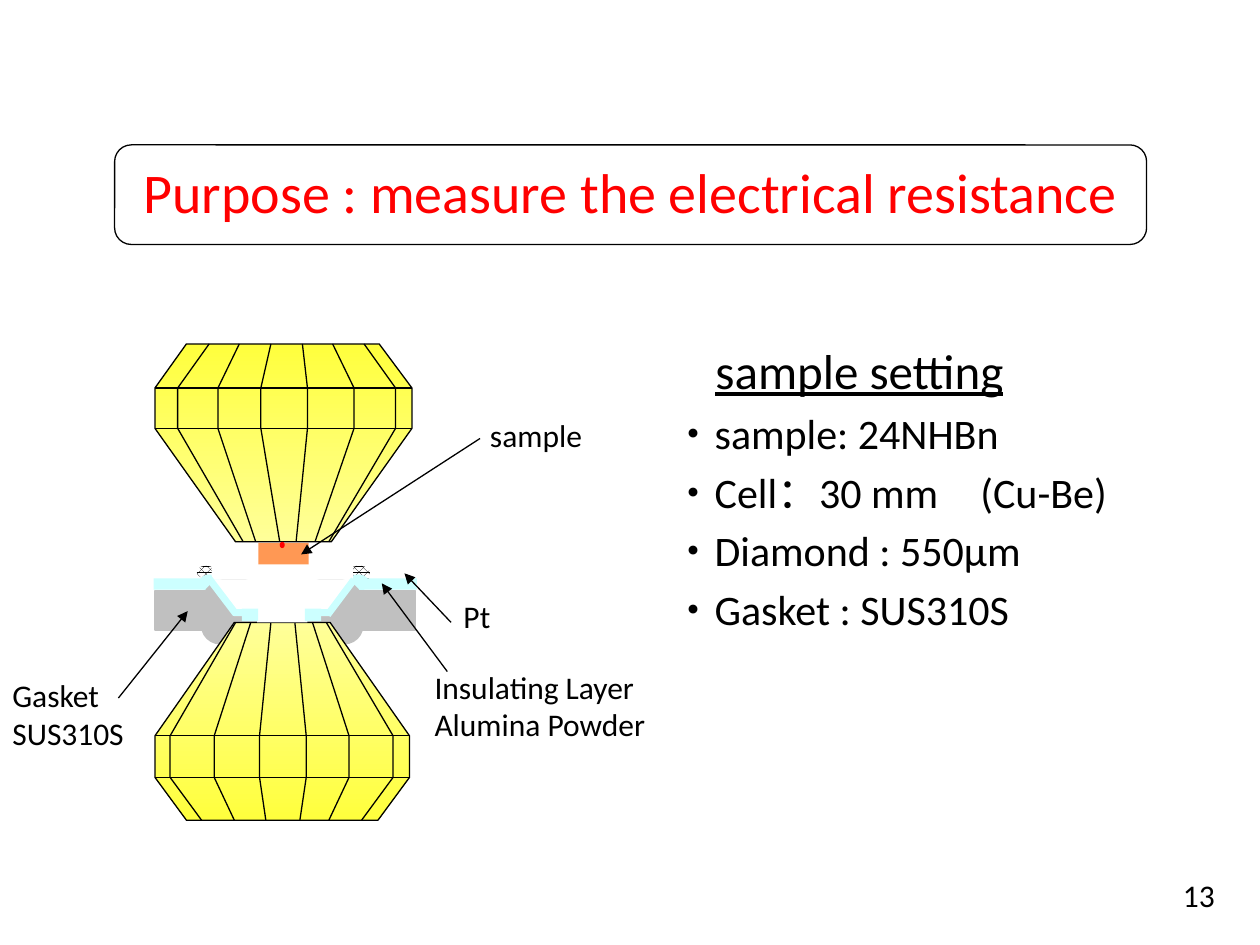
from dataclasses import dataclass

from lxml.etree import SubElement
from pptx import Presentation
from pptx.dml.color import RGBColor
from pptx.enum.dml import MSO_PATTERN
from pptx.enum.shapes import MSO_CONNECTOR, MSO_SHAPE as Preset
from pptx.oxml.ns import qn
from pptx.util import Inches, Pt


@dataclass(frozen=True)
class Theme:
    font: str = "Calibri"
    ink: str = "000000"
    paper: str = "FFFFFF"
    accent: str = "FF0000"
    gasket: str = "C0C0C0"
    insulator: str = "CCFFFF"
    sample: str = "FF6600"
    diamond_deep: str = "FFFF3D"
    diamond_pale: str = "FFFF99"
    title_size: int = 32
    heading_size: int = 28
    body_size: int = 24
    label_size: int = 18
    thin: float = 0.75
    layer: float = 4


THEME = Theme()


def rgb(colour):
    return RGBColor.from_string(colour)


class SlideBuilder:
    def __init__(self, slide, theme):
        self.shapes = slide.shapes
        self.theme = theme

    def style(self, shape, fill=None, outline=None):
        shape.shadow.inherit = False
        if fill:
            shape.fill.solid()
            shape.fill.fore_color.rgb = rgb(fill)
        else:
            shape.fill.background()
        if outline:
            shape.line.color.rgb = rgb(outline)
            shape.line.width = Pt(self.theme.thin)
        else:
            shape.line.fill.background()
        return shape

    def preset(self, kind, box, fill=None, outline=None, opacity=None):
        shape = self.shapes.add_shape(kind, *map(Inches, box))
        self.style(shape, fill, outline)
        if opacity:
            colour = shape._element.spPr.find(qn("a:solidFill"))[0]
            SubElement(colour, qn("a:alpha")).set("val", str(opacity * 1000))
        return shape

    def powder(self, box):
        """Speckled grain of insulating powder."""
        grain = self.preset(Preset.OVAL, box)
        grain.fill.patterned()
        grain.fill.pattern = MSO_PATTERN.PERCENT_70
        grain.fill.fore_color.rgb = rgb(self.theme.ink)
        grain.fill.back_color.rgb = rgb(self.theme.paper)

    def outline(self, points, fill=None, line=None, close=True):
        start, *rest = [(Inches(x), Inches(y)) for x, y in points]
        builder = self.shapes.build_freeform(*start, scale=1.0)
        builder.add_line_segments(rest, close=close)
        return self.style(builder.convert_to_shape(), fill, line)

    def line(self, start, end, colour=None, width=None, arrow=None):
        """Straight line; arrow is None, headEnd (start) or tailEnd (end)."""
        connector = self.shapes.add_connector(
            MSO_CONNECTOR.STRAIGHT, *map(Inches, (*start, *end)))
        connector.line.color.rgb = rgb(colour or self.theme.ink)
        connector.line.width = Pt(width or self.theme.thin)
        if arrow:
            SubElement(connector.line._get_or_add_ln(), qn("a:" + arrow)).set("type", "triangle")
        SubElement(connector._element.spPr, qn("a:effectLst"))

    def text(self, box, lines, size, colour=None, wrap=False):
        frame = self.shapes.add_textbox(*map(Inches, box)).text_frame
        frame.word_wrap = wrap
        for index, line in enumerate(lines):
            paragraph = frame.paragraphs[0] if index == 0 else frame.add_paragraph()
            self.run(paragraph, line, size, colour)
        return frame

    def run(self, paragraph, words, size, colour=None, underline=None):
        run = paragraph.add_run()
        run.text = words
        run.font.name = self.theme.font
        run.font.size = Pt(size)
        run.font.color.rgb = rgb(colour or self.theme.ink)
        run.font.underline = underline

    def settings(self, box, heading, items):
        theme = self.theme
        frame = self.text(box, [], theme.body_size, wrap=True)
        title = frame.paragraphs[0]
        self.run(title, heading, theme.heading_size, underline=True)
        title.space_before = Pt(theme.heading_size * 0.2)
        title._p.get_or_add_pPr().set("marL", str(Inches(0.34)))
        for item in items:
            paragraph = frame.add_paragraph()
            paragraph.space_before = Pt(theme.body_size * 0.2)
            self.run(paragraph, item, theme.body_size)

    def diamond(self, levels, sides, facets, colours):
        """Cut stone: each side or facet gives x at the table, girdle and tip."""
        theme = self.theme

        def edge(table, girdle, tip):
            return list(zip((table, girdle, girdle, tip), levels))

        left, right = sides
        body = self.outline(edge(*left) + edge(*right)[::-1], line=theme.ink)
        body.fill.gradient()
        body.fill.gradient_angle = 270
        for stop, colour in zip(body.fill.gradient_stops, colours):
            stop.color.rgb = rgb(colour)
        for y in levels[1:3]:
            self.line((left[1], y), (right[1], y))
        for facet in facets:
            self.outline(edge(*facet), line=theme.ink, close=False)


def draw_gasket(page):
    theme = page.theme
    for grain in ((2.76, 4.49, 0.18, 0.13), (1.56, 4.49, 0.15, 0.1)):
        page.powder(grain)
    for x in (1.58, 2.76):
        page.preset(Preset.OVAL, (x, 4.56, 0.17, 0.13), theme.insulator)
    grey = (theme.gasket, theme.gasket)
    for x in (2.38, 1.61):
        page.preset(Preset.OVAL, (x, 4.59, 0.49, 0.33), *grey)
    for x in (2.58, 1.6):
        page.preset(Preset.OVAL, (x, 4.82, 0.3, 0.29), *grey)
    page.preset(Preset.RECTANGLE, (1.23, 4.69, 2.07, 0.31), *grey)
    page.outline([(1.68, 4.6), (1.86, 4.89), (2.62, 4.89), (2.8, 4.6)], theme.paper)
    page.preset(Preset.RECTANGLE, (1.68, 4.49, 1.12, 0.11), theme.paper)


def draw_insulation(page):
    theme = page.theme
    for start, end in (((1.85, 4.86), (2.62, 4.86)),
                       ((1.87, 4.87), (1.65, 4.58)),
                       ((2.6, 4.88), (2.81, 4.6))):
        page.line(start, end, theme.insulator, theme.layer)
    for x, width in ((1.22, 0.41), (2.86, 0.45)):
        page.preset(Preset.RECTANGLE, (x, 4.59, width, 0.09), theme.insulator)
    page.preset(Preset.RECTANGLE, (2.04, 4.77, 0.4, 0.17), theme.paper)
    for x in (1.92, 2.42):
        page.preset(Preset.RECTANGLE, (x, 4.83, 0.13, 0.1), theme.insulator)


def main():
    deck = Presentation()
    deck.slide_width, deck.slide_height = Inches(10), Inches(7.5)
    page = SlideBuilder(deck.slides.add_slide(deck.slide_layouts[6]), THEME)

    page.text((1.04, 1.2, 8, 0.64), ["Purpose : measure the electrical resistance"],
              THEME.title_size, THEME.accent)
    page.preset(Preset.ROUNDED_RECTANGLE, (0.91, 1.15, 8.19, 0.79), outline=THEME.ink)
    page.settings((5.24, 2.65, 5.67, 3.86), "sample setting",
                  ["・sample: 24NHBn", "・Cell：30 mm　(Cu-Be)",
                   "・Diamond : 550μm", "・Gasket : SUS310S"])

    draw_gasket(page)
    page.diamond((6.51, 6.17, 5.84, 4.94), ((1.48, 1.23, 1.86), (3, 3.25, 2.62)),
                 ((1.6, 1.35, 1.87), (2.87, 3.12, 2.59), (1.86, 1.7, 1.99),
                  (2.11, 2.06, 2.15), (2.38, 2.43, 2.34), (2.61, 2.77, 2.48)),
                 (THEME.diamond_pale, THEME.diamond_deep))
    draw_insulation(page)
    page.diamond((2.73, 3.08, 3.4, 4.3), ((1.48, 1.23, 1.87), (3.01, 3.27, 2.63)),
                 ((1.66, 1.41, 1.93), (2.89, 3.14, 2.61), (1.9, 1.73, 2.03),
                  (2.64, 2.81, 2.5), (2.15, 2.07, 2.22), (2.4, 2.44, 2.35)),
                 (THEME.diamond_deep, THEME.diamond_pale))
    page.preset(Preset.RECTANGLE, (2.05, 4.31, 0.4, 0.17), THEME.sample, opacity=67)
    page.preset(Preset.OVAL, (2.22, 4.3, 0.04, 0.05), THEME.accent)

    for box, lines in (((3.35, 5.25, 2.02, 0.7), ["Insulating Layer", "Alumina Powder"]),
                       ((0, 5.32, 1.3, 0.7), ["Gasket", "SUS310S"]),
                       ((3.58, 4.69, 0.44, 0.4), ["Pt"]),
                       ((3.79, 3.25, 1.02, 0.4), ["sample"])):
        page.text(box, lines, THEME.label_size)
    page.line((0.94, 5.54), (1.49, 4.85), arrow="tailEnd")
    for target, label in (((3.03, 4.63), (3.55, 5.33)),
                          ((3.21, 4.55), (3.58, 4.94)),
                          ((2.39, 4.4), (3.81, 3.48))):
        page.line(target, label, arrow="headEnd")
    page.text((9.29, 6.9, 0.71, 0.4), ["13"], THEME.label_size, wrap=True)

    deck.save("out.pptx")


if __name__ == "__main__":
    main()
